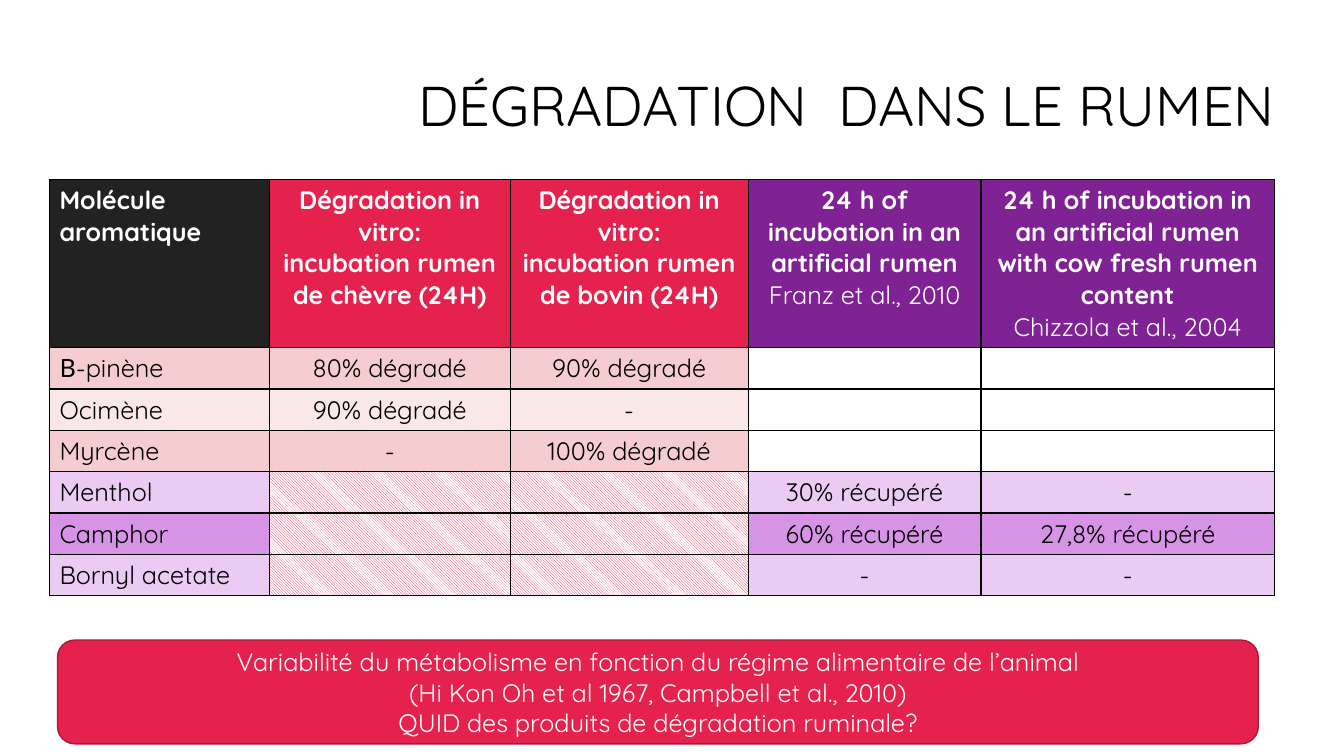
from dataclasses import dataclass
from typing import Optional

from lxml.etree import SubElement
from pptx import Presentation
from pptx.dml.color import RGBColor
from pptx.enum.dml import MSO_PATTERN
from pptx.enum.shapes import MSO_SHAPE
from pptx.enum.text import MSO_ANCHOR, PP_ALIGN
from pptx.oxml.ns import qn
from pptx.util import Inches, Pt

BLACK = RGBColor(0x00, 0x00, 0x00)
WHITE = RGBColor(0xFF, 0xFF, 0xFF)
DARK = RGBColor(0x22, 0x22, 0x22)
RED = RGBColor(0xE5, 0x22, 0x4E)
MAROON = RGBColor(0xA9, 0x19, 0x3A)
PURPLE = RGBColor(0x7F, 0x22, 0x94)
ROSE = RGBColor(0xF5, 0xCD, 0xD0)
BLUSH = RGBColor(0xFA, 0xE8, 0xE9)
LILAC = RGBColor(0xEB, 0xCA, 0xF3)
MAUVE = RGBColor(0xD7, 0x94, 0xE6)

LEFT, CENTER, RIGHT = PP_ALIGN.LEFT, PP_ALIGN.CENTER, PP_ALIGN.RIGHT
HEAD_H, ROW_H = 1.67, 0.41


@dataclass
class Column:
    width: float
    fill: RGBColor
    title: list[str]
    source: str = ""


@dataclass
class Molecule:
    name: str
    fill: RGBColor
    values: list[Optional[str]]  # None marks a cell outside the study
    blank: Optional[RGBColor]  # None gives a hatched cell


COLUMNS = [
    Column(2.18, DARK, ["Molécule aromatique"]),
    Column(2.39, RED, ["Dégradation in vitro:", "incubation rumen de chèvre (24H)"]),
    Column(2.36, RED, ["Dégradation in vitro:", "incubation rumen de bovin (24H)"]),
    Column(2.31, PURPLE, ["24 h of incubation in an artificial rumen"],
           "Franz et al., 2010"),
    Column(2.91, PURPLE,
           ["24 h of incubation in an artificial rumen with cow fresh rumen content"],
           "Chizzola et al., 2004"),
]

MOLECULES = [
    Molecule("Β-pinène", ROSE, ["80% dégradé", "90% dégradé", None, None], WHITE),
    Molecule("Ocimène", BLUSH, ["90% dégradé", "-", None, None], WHITE),
    Molecule("Myrcène", ROSE, ["-", "100% dégradé", None, None], WHITE),
    Molecule("Menthol", LILAC, [None, None, "30% récupéré", "-"], None),
    Molecule("Camphor", MAUVE, [None, None, "60% récupéré", "27,8% récupéré"], None),
    Molecule("Bornyl acetate", LILAC, [None, None, "-", "-"], None),
]

SUMMARY = [
    "Variabilité du métabolisme en fonction du régime alimentaire de l’animal",
    "(Hi Kon Oh et al 1967, Campbell et al., 2010)",
    "QUID des produits de dégradation ruminale?",
]


def write(frame, lines: list[str], align, color: RGBColor,
          size: int = 18, bold: bool = False) -> None:
    frame.word_wrap = True
    style = {"name": "Quicksand", "size": Pt(size), "bold": bold}
    for i, line in enumerate(lines):
        para = frame.add_paragraph() if i else frame.paragraphs[0]
        para.alignment = align
        run = para.add_run()
        run.text = line
        for key, value in style.items():
            setattr(run.font, key, value)
        run.font.color.rgb = color


def paint(cell, color: Optional[RGBColor]) -> None:
    """Fill a cell, hatched when no colour is given, and rule its four sides."""
    props = cell._tc.get_or_add_tcPr()
    for side in ("L", "R", "T", "B"):
        line = SubElement(props, qn(f"a:ln{side}"), w=str(Pt(1)))
        solid = SubElement(line, qn("a:solidFill"))
        SubElement(solid, qn("a:srgbClr"), val=str(BLACK))
    if color is None:
        cell.fill.patterned()
        cell.fill.pattern = MSO_PATTERN.LIGHT_DOWNWARD_DIAGONAL
        cell.fill.fore_color.rgb = RED
        cell.fill.back_color.rgb = WHITE
    else:
        cell.fill.solid()
        cell.fill.fore_color.rgb = color


def add_title(slide) -> None:
    box = slide.shapes.add_textbox(Inches(3.32), Inches(0.37), Inches(9.42), Inches(1.41))
    frame = box.text_frame
    frame.vertical_anchor = MSO_ANCHOR.MIDDLE
    write(frame, ["DÉGRADATION  DANS LE RUMEN"], RIGHT, BLACK, size=40)
    frame.paragraphs[0].line_spacing = 0.9


def add_results(slide) -> None:
    width = sum(col.width for col in COLUMNS)
    height = HEAD_H + ROW_H * len(MOLECULES)
    table = slide.shapes.add_table(
        len(MOLECULES) + 1, len(COLUMNS),
        Inches(0.49), Inches(1.78), Inches(width), Inches(height)).table

    for c, col in enumerate(COLUMNS):
        table.columns[c].width = Inches(col.width)
        cell = table.cell(0, c)
        paint(cell, col.fill)
        align = CENTER if c else LEFT
        write(cell.text_frame, col.title, align, WHITE, bold=True)
        if col.source:
            para = cell.text_frame.add_paragraph()
            para.alignment = align
            run = para.add_run()
            run.text = col.source
            run.font.name, run.font.size, run.font.bold = "Quicksand", Pt(18), False
            run.font.color.rgb = WHITE

    table.rows[0].height = Inches(HEAD_H)
    for r, mol in enumerate(MOLECULES, 1):
        table.rows[r].height = Inches(ROW_H)
        for c, text in enumerate([mol.name, *mol.values]):
            cell = table.cell(r, c)
            paint(cell, mol.blank if text is None else mol.fill)
            if text is not None:
                write(cell.text_frame, [text], CENTER if c else LEFT, BLACK)


def add_summary(slide) -> None:
    box = slide.shapes.add_shape(MSO_SHAPE.ROUNDED_RECTANGLE, Inches(0.57),
                                 Inches(6.35), Inches(11.91), Inches(1.03))
    box.shadow.inherit = False
    box.fill.solid()
    box.fill.fore_color.rgb = RED
    box.line.color.rgb = MAROON
    box.line.width = Pt(1)
    box.text_frame.vertical_anchor = MSO_ANCHOR.MIDDLE
    write(box.text_frame, SUMMARY, CENTER, WHITE)


def main() -> None:
    deck = Presentation()
    deck.slide_width, deck.slide_height = Inches(13.33), Inches(7.5)
    slide = deck.slides.add_slide(deck.slide_layouts[6])
    add_title(slide)
    add_results(slide)
    add_summary(slide)
    deck.save("out.pptx")


if __name__ == "__main__":
    main()
